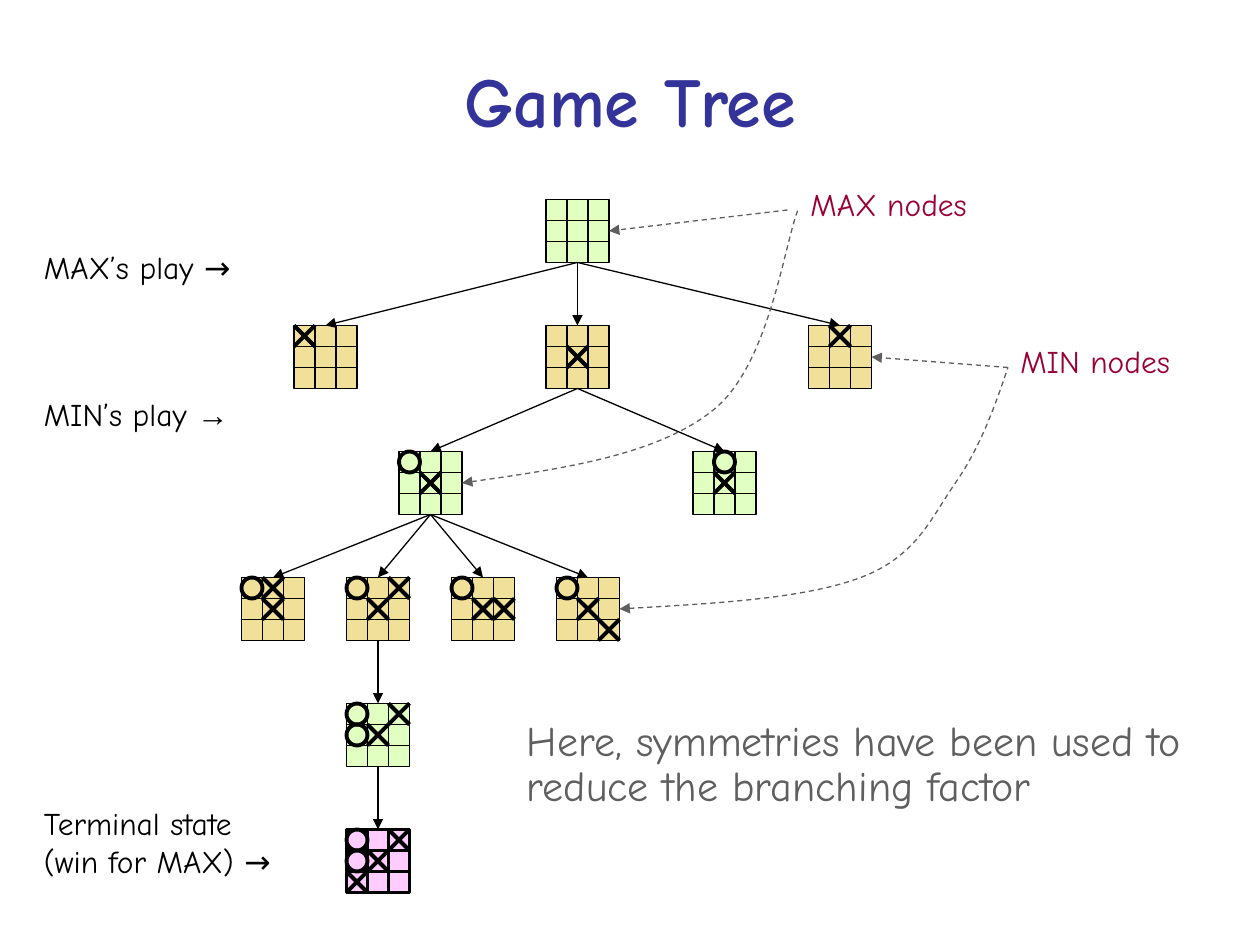
from lxml.etree import SubElement
from pptx import Presentation
from pptx.dml.color import RGBColor as RGB
from pptx.enum.dml import MSO_LINE as DASH
from pptx.enum.shapes import MSO_CONNECTOR as CONN, MSO_SHAPE as SHAPE
from pptx.enum.text import MSO_ANCHOR as ANCHOR, PP_ALIGN as ALIGN
from pptx.oxml.ns import qn
from pptx.util import Inches, Pt

COLS, ROWS = 120, 90
UNIT = Inches(10) // COLS
CELL, SIDE = 2, 6
TREE_TOP, LEVEL_STEP = 19, 12

COLORS = {
    "title": "333399", "ink": "000000", "grey": "5F5F5F", "label": "990033",
    "max": "E0FFC1", "min": "F0E09A", "terminal": "FFCCFF",
}
FONT = "Comic Neue"

BOARDS = {
    "root": (0, 52, "max", "........."),
    "corner": (1, 28, "min", "X........"),
    "edge": (1, 77, "min", ".X......."),
    "centre": (1, 52, "min", "....X...."),
    "o_corner": (2, 38, "max", "O...X...."),
    "o_edge": (2, 66, "max", ".O..X...."),
    "x_top": (3, 23, "min", "OX..X...."),
    "x_diagonal": (3, 33, "min", "O.X.X...."),
    "x_right": (3, 43, "min", "O...XX..."),
    "x_opposite": (3, 53, "min", "O...X...X"),
    "o_left": (4, 33, "max", "O.XOX...."),
    "win": (5, 33, "terminal", "O.XOX.X.."),
}
CHILDREN = {
    "root": ["corner", "centre", "edge"],
    "centre": ["o_corner", "o_edge"],
    "o_corner": ["x_top", "x_diagonal", "x_right", "x_opposite"],
    "x_diagonal": ["o_left"],
    "o_left": ["win"],
}
LABELS = [
    ((3, 23, 21.7, 4.8), [("MAX’s play →", FONT)]),
    ((3, 37, 21.4, 4.8), [("MIN’s play ", FONT), ("→", "Arial")]),
    ((3, 76, 26.3, 8.4), [("Terminal state\v(win for MAX) →", FONT)]),
]
CALLOUTS = [
    ("MIN nodes", (96, 32, 18, 4.8), (96, 35, 83, 34),
     [(59, 58), (67.8, 57.5), (76.7, 57), (82, 55), (87.3, 53), (88.7, 49.3),
      (91, 46), (93.3, 42.7), (94.7, 38.9), (96, 35)]),
    ("MAX nodes", (76, 17, 18.4, 4.8), (75, 20, 58, 22),
     [(44, 46), (53.3, 44.7), (62.7, 43.3), (68, 39), (73.3, 34.7),
      (74.7, 23.2), (76, 20)]),
]


def grid(*vals):
    """Turn grid units into slide lengths."""
    return [round(v * UNIT) for v in vals]


def set_line(sp, color="ink", width=0.75, dash=None, arrow=None):
    """Style an outline, with an optional dash and arrowhead."""
    fmt = {"width": Pt(width), "dash_style": dash}
    sp.line.color.rgb = RGB.from_string(COLORS[color])
    for name, val in fmt.items():
        setattr(sp.line, name, val)
    if arrow:
        ln = sp._element.spPr.find(qn("a:ln"))
        SubElement(ln, qn(f"a:{arrow}"), type="triangle")


def add_line(shapes, ends, **style):
    """Draw a straight line between two grid points."""
    sp = shapes.add_connector(CONN.STRAIGHT, *grid(*ends))
    set_line(sp, **style)
    SubElement(sp._element.spPr, qn("a:effectLst"))


def add_preset(shapes, kind, box, fill, width):
    """Draw an outlined preset shape, hollow when fill is None."""
    sp = shapes.add_shape(kind, *grid(*box))
    sp.shadow.inherit = False
    if fill:
        sp.fill.solid()
        sp.fill.fore_color.rgb = RGB.from_string(COLORS[fill])
    else:
        sp.fill.background()
    set_line(sp, width=width)


def add_curve(shapes, pts, **style):
    """Draw an open Bezier path from a start and triples of points."""
    pts = [grid(*pt) for pt in pts]
    fb = shapes.build_freeform(*pts[0])
    fb.add_line_segments(pts[1:], close=False)
    sp = fb.convert_to_shape()
    sp.shadow.inherit = False
    sp.fill.background()
    set_line(sp, **style)
    path = next(sp._element.iter(qn("a:path")))
    steps = path.findall(qn("a:lnTo"))
    for i in range(0, len(steps), 3):
        bezier = SubElement(path, qn("a:cubicBezTo"))
        for step in steps[i:i + 3]:
            bezier.append(step[0])
            path.remove(step)


def add_text(shapes, box, runs, size=18, color="ink", wrap=False, bold=False,
             anchor=ANCHOR.TOP, align=ALIGN.LEFT, spacing=None):
    """Write one paragraph of (text, font) runs in a box."""
    tf = shapes.add_textbox(*grid(*box)).text_frame
    p = tf.paragraphs[0]
    for obj, fmt in (
        (tf, {"word_wrap": wrap, "vertical_anchor": anchor}),
        (p, {"alignment": align, "line_spacing": spacing}),
    ):
        for name, val in fmt.items():
            setattr(obj, name, val)
    for text, font in runs:
        for i, part in enumerate(text.split("\v")):
            if i:
                p.add_line_break()
            r = p.add_run()
            r.text = part
            fmt = {"name": font, "size": Pt(size), "bold": bold}
            for name, val in fmt.items():
                setattr(r.font, name, val)
            r.font.color.rgb = RGB.from_string(COLORS[color])


def add_board(shapes, x, y, kind, marks):
    """Draw a three by three board and its noughts and crosses."""
    g = shapes.add_group_shape().shapes
    width = 1.5 if kind == "terminal" else 0.75
    add_preset(g, SHAPE.RECTANGLE, (x, y, SIDE, SIDE), kind, width)
    for d in (CELL, 2 * CELL):
        add_line(g, (x, y + d, x + SIDE, y + d), width=width)
        add_line(g, (x + d, y, x + d, y + SIDE), width=width)
    for i, mark in enumerate(marks):
        row, col = divmod(i, 3)
        l, t = x + col * CELL, y + row * CELL
        r, b = l + CELL, t + CELL
        if mark == "X":
            add_line(g, (l, t, r, b), width=2.25)
            add_line(g, (l, b, r, t), width=2.25)
        elif mark == "O":
            fill = None if kind == "max" else kind
            add_preset(g, SHAPE.OVAL, (l, t, CELL, CELL), fill, 2.25)


def add_tree(shapes, top):
    """Draw every board, then the arrows from parents to children."""
    spots = {}
    for name, (level, x, kind, marks) in BOARDS.items():
        y = top + level * LEVEL_STEP
        spots[name] = (x + SIDE / 2, y)
        add_board(shapes, x, y, kind, marks)
    for parent, names in CHILDREN.items():
        x, y = spots[parent]
        for child in names:
            add_line(shapes, (x, y + SIDE, *spots[child]), arrow="tailEnd")


def add_callout(shapes, text, box, ends, pts):
    """Write a node label with its straight and curved pointers."""
    style = {"color": "grey", "dash": DASH.DASH}
    add_text(shapes, box, [(text, FONT)], color="label")
    add_curve(shapes, pts, arrow="headEnd", **style)
    add_line(shapes, ends, arrow="tailEnd", **style)


def main():
    """Build and save the slide."""
    prs = Presentation()
    prs.slide_width, prs.slide_height = grid(COLS, ROWS)
    shapes = prs.slides.add_slide(prs.slide_layouts[6]).shapes
    add_text(shapes, (6, 2, 108, 15), [("Game Tree", FONT)], 40, "title", True,
             True, ANCHOR.MIDDLE, ALIGN.CENTER)
    add_tree(shapes, TREE_TOP)
    for box, runs in LABELS:
        add_text(shapes, box, runs)
    note = "Here, symmetries have been used to reduce the branching factor"
    add_text(shapes, (49, 68, 66, 9.8), [(note, FONT)], 24, "grey", True,
             spacing=0.9)
    for callout in CALLOUTS:
        add_callout(shapes, *callout)
    prs.save("out.pptx")


if __name__ == "__main__":
    main()
